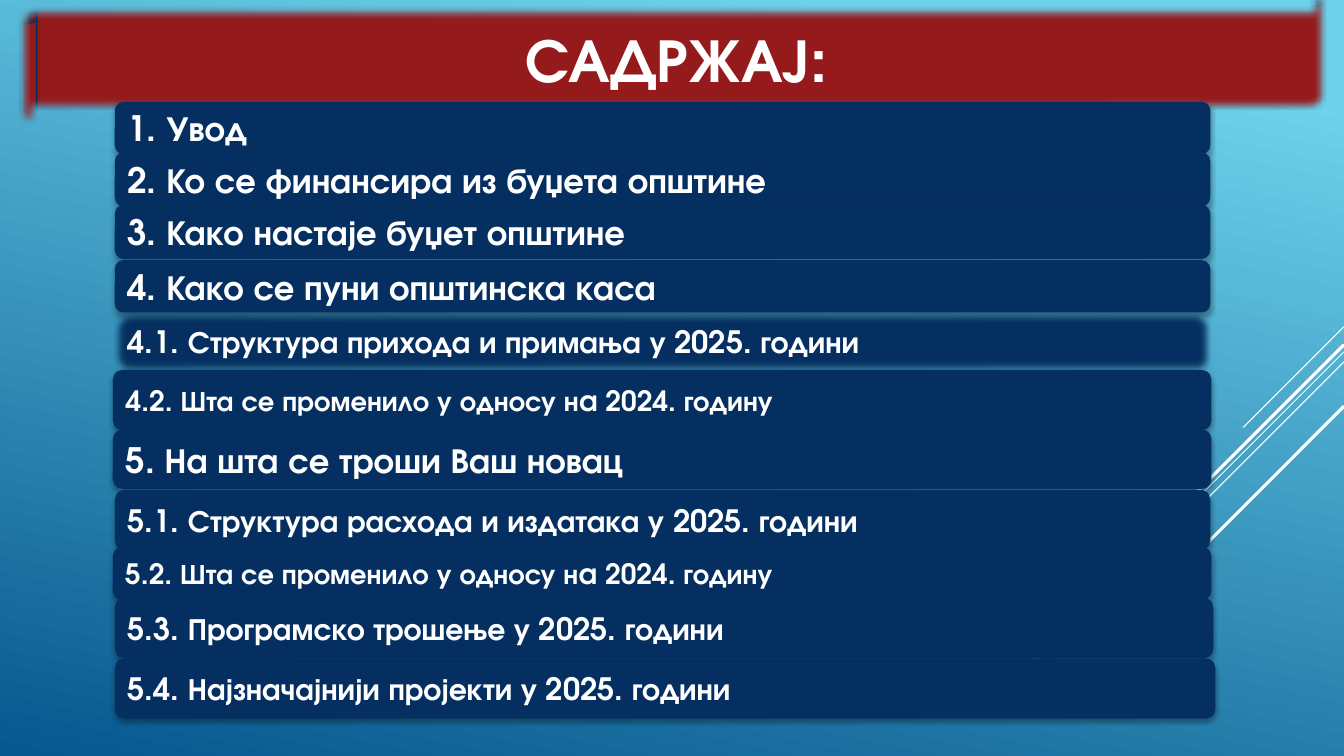
from dataclasses import dataclass
from typing import NamedTuple

from lxml.etree import SubElement
from pptx import Presentation
from pptx.dml.color import RGBColor as Rgb
from pptx.enum.shapes import MSO_CONNECTOR as Connector, MSO_SHAPE as Preset
from pptx.enum.text import MSO_ANCHOR as Anchor, PP_ALIGN as Align
from pptx.oxml.ns import qn
from pptx.util import Pt


class Box(NamedTuple):
    left: float
    top: float
    width: float
    height: float


@dataclass(frozen=True)
class Theme:
    font: str = "TeX Gyre Adventor"
    sky: str = "6ED2EB"
    deep: str = "06588E"
    white: str = "FFFFFF"
    navy: str = "052F61"
    red: str = "941A1B"
    shade: str = "000000"
    title: int = 44
    chapter: int = 25
    section: int = 22
    change: int = 20


THEME = Theme()
PAGE = Box(0, 0, 960, 540)
BANNER = Box(13.7, -7.9, 933.1, 97.9)
CONTENTS = Box(80.6, 72.7, 787.7, 440.7)
SOFT_EDGE = 5

RAYS = [
    (233.3, 72, 0.75),
    (251.3, 234.7, 0.75),
    (258.5, 149, 0.75),
    (246.2, 137.5, 2.25),
    (290.2, 100, 2.25),
]

ENTRIES = [
    ("1. Увод", THEME.chapter, Box(1.4, 0, 782.6, 37.4), False),
    ("2. Ко се финансира из буџета општине", THEME.chapter, Box(1.4, 36, 782.6, 38.9), False),
    ("3. Како настаје буџет општине", THEME.chapter, Box(1.4, 73.5, 782.6, 38.9), False),
    ("4. Како се пуни општинска каса", THEME.chapter, Box(1.4, 113.1, 782.6, 37.4), False),
    ("4.1. Структура прихода и примања у 2025. години", THEME.section, Box(1.4, 149.8, 782.6, 43.2), True),
    ("4.2. Шта се променило у односу нa 2024. годину", THEME.change, Box(0, 191.5, 784.8, 43.2), False),
    ("5. На шта се троши Ваш новац", THEME.chapter, Box(0, 234, 784.8, 42.5), False),
    ("5.1. Структура расхода и издатака у 2025. години", THEME.section, Box(1.4, 277.2, 782.6, 43.2), False),
    ("5.2. Шта се променило у односу нa 2024. годину", THEME.change, Box(0, 318.3, 784.8, 37.4), False),
    ("5.3. Програмско трошење у 2025. години", THEME.section, Box(1.4, 354.3, 784.8, 43.2), False),
    ("5.4. Најзначајнији пројекти у 2025. години", THEME.section, Box(1.4, 397.5, 786.2, 43.2), False),
]


def color(code):
    return Rgb.from_string(code)


def add_panel(slide, preset, box, fill, text, size, align):
    panel = slide.shapes.add_shape(preset, *map(Pt, box))
    panel.shadow.inherit = False
    panel.fill.solid()
    panel.fill.fore_color.rgb = color(fill)
    frame = panel.text_frame
    frame.word_wrap = True
    frame.vertical_anchor = Anchor.MIDDLE
    paragraph = frame.paragraphs[0]
    paragraph.alignment = align
    run = paragraph.add_run()
    run.text = text
    run.font.name = THEME.font
    run.font.size = Pt(size)
    run.font.bold = True
    run.font.color.rgb = color(THEME.white)
    return panel


def effects_of(panel):
    return panel.element.spPr.find(qn("a:effectLst"))


def add_drop_shadow(panel):
    shadow = SubElement(
        effects_of(panel), qn("a:outerShdw"), blurRad=str(Pt(3.5)),
        dist=str(Pt(2.2)), dir="5400000", algn="ctr", rotWithShape="0",
    )
    tint = SubElement(shadow, qn("a:srgbClr"), val=THEME.shade)
    SubElement(tint, qn("a:alpha"), val="32000")


def soften_edge(panel):
    SubElement(effects_of(panel), qn("a:softEdge"), rad=str(Pt(SOFT_EDGE)))


def paint_background(slide):
    fill = slide.background.fill
    fill.gradient()
    fill.gradient_angle = 258
    stops = [(0.1, THEME.sky), (1, THEME.deep)]
    for stop, (position, code) in zip(fill.gradient_stops, stops):
        stop.position = position
        stop.color.rgb = color(code)


def draw_rays(slide, box):
    right = box.left + box.width
    for start, reach, weight in RAYS:
        top = box.top + start
        ray = slide.shapes.add_connector(
            Connector.STRAIGHT, Pt(right), Pt(top), Pt(right - reach), Pt(top + reach)
        )
        ray.line.color.rgb = color(THEME.white)
        ray.line.width = Pt(weight)
        SubElement(ray.element.spPr, qn("a:effectLst"))


def draw_banner(slide, box):
    banner = add_panel(
        slide, Preset.HORIZONTAL_SCROLL, box, THEME.red, "САДРЖАЈ:", THEME.title, Align.CENTER
    )
    banner.line.color.rgb = color(THEME.navy)
    banner.line.width = Pt(1.25)
    soften_edge(banner)


def draw_contents(slide, box):
    for text, size, place, soft in ENTRIES:
        bar_box = place._replace(left=box.left + place.left, top=box.top + place.top)
        bar = add_panel(
            slide, Preset.ROUNDED_RECTANGLE, bar_box, THEME.navy, text, size, Align.LEFT
        )
        bar.line.fill.background()
        add_drop_shadow(bar)
        if soft:
            soften_edge(bar)


def main():
    deck = Presentation()
    deck.slide_width = Pt(PAGE.width)
    deck.slide_height = Pt(PAGE.height)
    slide = deck.slides.add_slide(deck.slide_layouts[6])
    paint_background(slide)
    draw_rays(slide, PAGE)
    draw_banner(slide, BANNER)
    draw_contents(slide, CONTENTS)
    deck.save("out.pptx")


if __name__ == "__main__":
    main()
